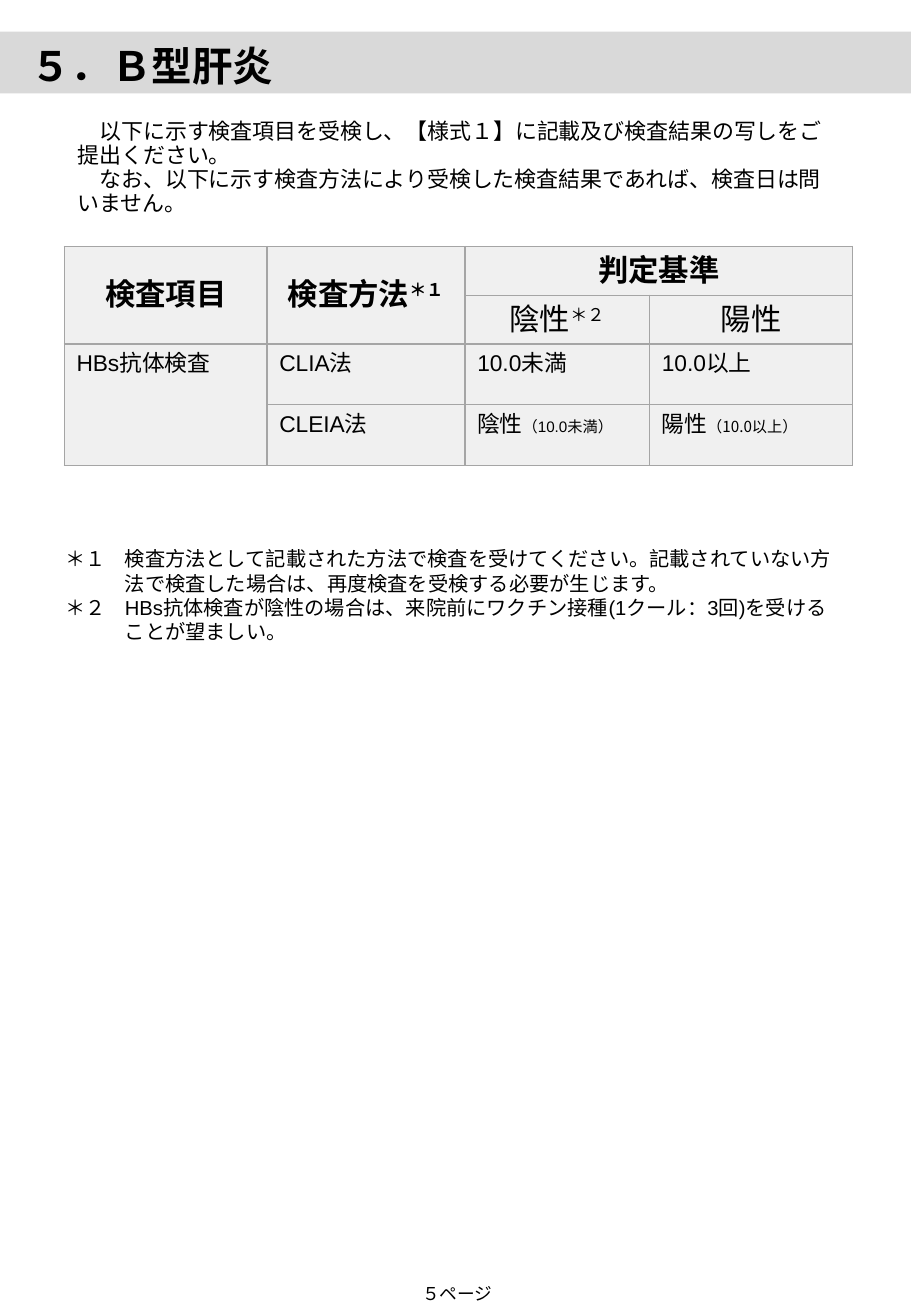
from dataclasses import dataclass

from lxml import etree
from pptx import Presentation, util as u
from pptx.dml.color import RGBColor
from pptx.enum import shapes, text
from pptx.oxml import ns

COLORS = {"black": "000000", "band": "D9D9D9", "cell": "F0F0F0", "border": "A5A5A5"}
LATIN, EAST_ASIAN = "Arial", "Calibri"
LEFT, CENTER = text.PP_ALIGN.LEFT, text.PP_ALIGN.CENTER
TOP, MIDDLE = text.MSO_ANCHOR.TOP, text.MSO_ANCHOR.MIDDLE


@dataclass
class Span:
    words: str
    size: float
    bold: bool = False
    font: str = LATIN
    raised: bool = False


@dataclass
class Cell:
    row: int
    col: int
    spans: list[Span]
    rows: int = 1
    cols: int = 1
    header: bool = False


def head(words: str, bold: bool = True, raised: bool = False) -> Span:
    return Span(words, 18, bold, "Calibri", raised)


def body(words: str) -> Span:
    return Span(words, 13.5)


CELLS = [
    Cell(0, 0, [head("検査項目")], rows=2, header=True),
    Cell(0, 1, [head("検査方法"), head("＊１", raised=True)], rows=2, header=True),
    Cell(0, 2, [head("判定基準")], cols=2, header=True),
    Cell(1, 2, [head("陰性", False), head("＊２", False, True)], header=True),
    Cell(1, 3, [head("陽性", False)], header=True),
    Cell(2, 0, [body("HBs抗体検査")], rows=2),
    Cell(2, 1, [body("CLIA法")]),
    Cell(2, 2, [body("10.0未満")]),
    Cell(2, 3, [body("10.0以上")]),
    Cell(3, 1, [body("CLEIA法")]),
    Cell(3, 2, [body("陰性"), Span("（10.0未満）", 9)]),
    Cell(3, 3, [body("陽性"), Span("（10.0以上）", 9, font="Noto Sans CJK JP")]),
]
COLUMN_WIDTHS = [1.67, 1.63, 1.52, 1.67]
ROW_HEIGHTS = [0.4, 0.4, 0.5, 0.5]
INTRO = [
    "　以下に示す検査項目を受検し、【様式１】に記載及び検査結果の写しをご提出ください。",
    "　なお、以下に示す検査方法により受検した検査結果であれば、検査日は問いません。",
]
NOTES = [
    "＊１\t検査方法として記載された方法で検査を受けてください。記載されていない方法で検査した場合は、再度検査を受検する必要が生じます。",
    "＊２\tHBs抗体検査が陰性の場合は、来院前にワクチン接種(1クール：3回)を受けることが望ましい。",
]


def color(name: str) -> RGBColor:
    return RGBColor.from_string(COLORS[name])


def add_span(para, span: Span) -> None:
    run = para.add_run()
    run.text = span.words
    font = run.font
    font.size, font.bold, font.name = u.Pt(span.size), span.bold, span.font
    font.color.rgb = color("black")
    props = font._element
    if span.raised:
        props.set("baseline", "30000")
    etree.SubElement(props, ns.qn("a:ea"), typeface=EAST_ASIAN)


def add_text(page, frame: tuple, spans: list[Span], align=LEFT, hang: float = 0) -> None:
    """Add a text box with one paragraph for each span."""
    box = page.shapes.add_textbox(*map(u.Inches, frame)).text_frame
    box.word_wrap = True
    for index, span in enumerate(spans):
        para = box.add_paragraph() if index else box.paragraphs[0]
        para.alignment = align
        if hang:
            props = para._p.get_or_add_pPr()
            props.set("marL", str(u.Inches(hang)))
            props.set("indent", str(-u.Inches(hang)))
            stops = etree.SubElement(props, ns.qn("a:tabLst"))
            etree.SubElement(stops, ns.qn("a:tab"), pos=str(u.Inches(hang)), algn="l")
        add_span(para, span)


def style_cell(cell) -> None:
    """Give a cell its borders, then its fill."""
    props = cell._tc.get_or_add_tcPr()
    for side in ("lnL", "lnR", "lnT", "lnB"):
        line = etree.SubElement(props, ns.qn(f"a:{side}"), w=str(u.Pt(1)))
        fill = etree.SubElement(line, ns.qn("a:solidFill"))
        etree.SubElement(fill, ns.qn("a:srgbClr"), val=COLORS["border"])
    cell.fill.solid()
    cell.fill.fore_color.rgb = color("cell")


def add_criteria_table(page) -> None:
    frame = map(u.Inches, (0.53, 2.03, sum(COLUMN_WIDTHS), sum(ROW_HEIGHTS)))
    table = page.shapes.add_table(len(ROW_HEIGHTS), len(COLUMN_WIDTHS), *frame).table
    for column, width in zip(table.columns, COLUMN_WIDTHS):
        column.width = u.Inches(width)
    for row, height in zip(table.rows, ROW_HEIGHTS):
        row.height = u.Inches(height)
    for cell in table.iter_cells():
        style_cell(cell)
    for item in CELLS:
        cell = table.cell(item.row, item.col)
        if item.rows * item.cols > 1:
            cell.merge(table.cell(item.row + item.rows - 1, item.col + item.cols - 1))
        cell.vertical_anchor = MIDDLE if item.header else TOP
        para = cell.text_frame.paragraphs[0]
        para.alignment = CENTER if item.header else LEFT
        for span in item.spans:
            add_span(para, span)


def add_band(page) -> None:
    frame = map(u.Inches, (-0.19, 0.26, 7.92, 0.51))
    band = page.shapes.add_shape(shapes.MSO_SHAPE.RECTANGLE, *frame)
    band.shadow.inherit = False
    band.fill.solid()
    band.fill.fore_color.rgb = color("band")
    band.line.fill.background()


def fill_title(page) -> None:
    title = page.shapes.title
    title.left, title.top, title.width, title.height = map(u.Inches, (0.54, 0.74, 6.47, 1.29))
    box = title.text_frame
    box.word_wrap, box.vertical_anchor = True, MIDDLE
    para = box.paragraphs[0]
    para.alignment, para.line_spacing = LEFT, 0.9
    for index, words in enumerate(INTRO):
        if index:
            para.add_line_break()
        add_span(para, Span(words, 13))


def main() -> None:
    deck = Presentation()
    deck.slide_width, deck.slide_height = u.Inches(7.5), u.Inches(10.83)
    page = deck.slides.add_slide(deck.slide_layouts[5])

    # Heading band and introduction
    add_band(page)
    fill_title(page)
    add_text(page, (0.15, 0.29, 5.76, 0.5), [Span("５．Ｂ型肝炎", 24, True)])

    # Test criteria and their notes
    add_criteria_table(page)
    add_text(page, (0.44, 4.45, 6.57, 0.91), [Span(note, 12) for note in NOTES], hang=0.49)

    # Page number
    add_text(page, (2.66, 10.51, 2.21, 0.28), [Span("５ページ", 10.5)], CENTER)
    deck.save("out.pptx")


if __name__ == "__main__":
    main()
